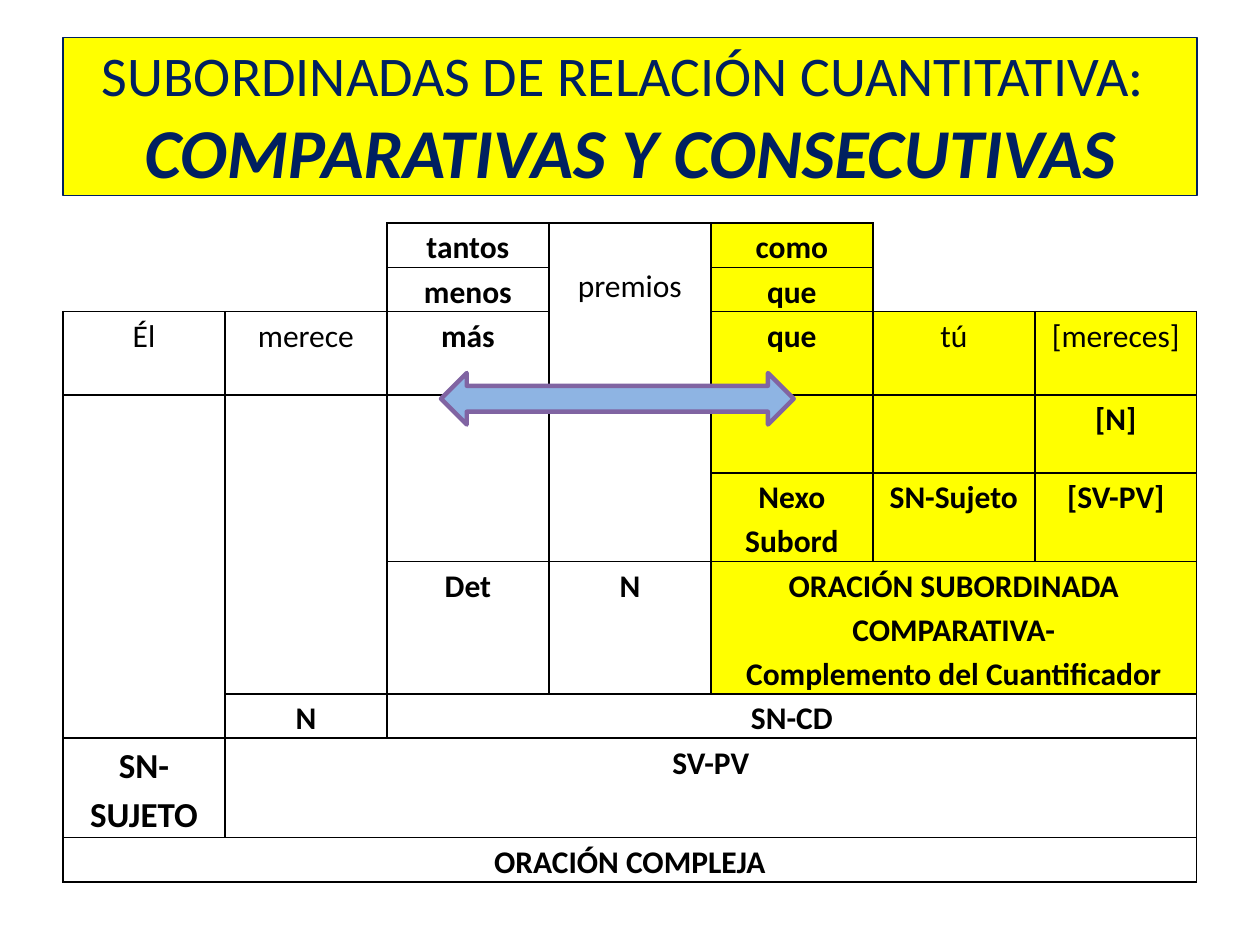
from lxml.etree import SubElement
from pptx import Presentation
from pptx.dml.color import RGBColor
from pptx.enum.shapes import MSO_SHAPE
from pptx.enum.text import MSO_ANCHOR, PP_ALIGN
from pptx.oxml.ns import qn
from pptx.util import Inches, Pt

BLACK = RGBColor(0x00, 0x00, 0x00)
YELLOW = RGBColor(0xFF, 0xFF, 0x00)
NAVY = RGBColor(0x00, 0x20, 0x60)
SKY = RGBColor(0x8E, 0xB4, 0xE3)
PURPLE = RGBColor(0x80, 0x64, 0xA2)
FONT = "Calibri"

MARGIN, TABLE_TOP, TABLE_WIDTH = 0.5, 1.77, 9
COLUMNS = 7
ROW_HEIGHTS = [0.35, 0.35, 0.66, 0.62, 0.7, 1.05, 0.35, 0.79, 0.35]
PREMIOS = (0, 3)
SUBJECT = (7, 0)

WORDS = {
    (2, 0): "Él", (2, 1): "merece", PREMIOS: "premios",
    (2, 5): "tú", (2, 6): "[mereces]",
}
LABELS = {
    (0, 2): "tantos", (1, 2): "menos", (2, 2): "más",
    (0, 4): "como", (1, 4): "que", (2, 4): "que",
    (3, 6): "[N]", (4, 4): "Nexo Subord", (4, 5): "SN-Sujeto", (4, 6): "[SV-PV]",
    (5, 2): "Det", (5, 3): "N",
    (5, 4): "ORACIÓN SUBORDINADA COMPARATIVA-\nComplemento del Cuantificador",
    (6, 1): "N", (6, 2): "SN-CD",
    SUBJECT: "SN-SUJETO", (7, 1): "SV-PV", (8, 0): "ORACIÓN COMPLEJA",
}
SPANS = {
    (0, 5): (1, 2), (1, 5): (1, 2), PREMIOS: (3, 1),
    (3, 0): (4, 1), (3, 1): (3, 1), (3, 2): (2, 1), (3, 3): (2, 1),
    (5, 4): (1, 3), (6, 2): (1, 5), (7, 1): (1, 6), (8, 0): (1, 7),
}


def is_open(row, col):
    """Tell whether a position lies outside the outlined part of the analysis."""
    inside = 0 <= row < len(ROW_HEIGHTS) and 0 <= col < COLUMNS
    return not inside or (row < 2 and col not in (2, 3, 4))


def style_font(font, size, color, bold=False, italic=False):
    """Apply the common typeface with the given look."""
    font.name, font.size = FONT, Pt(size)
    font.bold, font.italic = bold, italic
    font.color.rgb = color


def set_borders(cell, row, col):
    """Outline each side that touches the analysis and clear the others."""
    neighbours = {
        "lnL": (row, col - 1), "lnR": (row, col + 1),
        "lnT": (row - 1, col), "lnB": (row + 1, col),
    }
    properties = cell._tc.get_or_add_tcPr()
    for side, neighbour in neighbours.items():
        border = SubElement(properties, qn(f"a:{side}"), w=str(Pt(1)))
        if is_open(row, col) and is_open(*neighbour):
            SubElement(border, qn("a:noFill"))
        else:
            fill = SubElement(border, qn("a:solidFill"))
            SubElement(fill, qn("a:srgbClr"), val=str(BLACK))


def fill_cell(cell, row, col):
    """Give one cell its borders, background and wording."""
    position = (row, col)
    set_borders(cell, row, col)
    if col >= 4 and row <= 5 and not is_open(row, col):
        cell.fill.solid()
        cell.fill.fore_color.rgb = YELLOW
    else:
        cell.fill.background()
    cell.margin_left = cell.margin_right = Inches(0.07)
    cell.margin_top = Inches(0.31 if position == PREMIOS else 0)
    cell.margin_bottom = 0
    cell.text_frame.text = LABELS.get(position, WORDS.get(position, ""))
    size = 20 if position == SUBJECT else 18
    for paragraph in cell.text_frame.paragraphs:
        paragraph.alignment = PP_ALIGN.CENTER
        paragraph.line_spacing = 1.15
        for run in paragraph.runs:
            style_font(run.font, size, BLACK, bold=position in LABELS)


def add_analysis(slide):
    """Add the syntactic analysis as a table with merged constituents."""
    table = slide.shapes.add_table(
        len(ROW_HEIGHTS), COLUMNS, Inches(MARGIN), Inches(TABLE_TOP),
        Inches(TABLE_WIDTH), Inches(sum(ROW_HEIGHTS)),
    ).table
    table.first_row = table.horz_banding = False
    for column in table.columns:
        column.width = Inches(TABLE_WIDTH / COLUMNS)
    for row, height in enumerate(ROW_HEIGHTS):
        table.rows[row].height = Inches(height)
        for col in range(COLUMNS):
            fill_cell(table.cell(row, col), row, col)
    for (row, col), (rows, cols) in SPANS.items():
        table.cell(row, col).merge(table.cell(row + rows - 1, col + cols - 1))


def add_block(slide, kind, box, fill, line, line_width):
    """Add a filled and outlined preset shape."""
    block = slide.shapes.add_shape(kind, *map(Inches, box))
    block.shadow.inherit = False
    block.fill.solid()
    block.fill.fore_color.rgb = fill
    block.line.color.rgb = line
    block.line.width = Pt(line_width)
    return block


def add_heading(slide):
    """Add the two-line heading on its yellow band."""
    heading = add_block(slide, MSO_SHAPE.RECTANGLE, (MARGIN, 0.3, TABLE_WIDTH, 1.25),
                        YELLOW, NAVY, 0.75)
    frame = heading.text_frame
    frame.word_wrap = True
    frame.vertical_anchor = MSO_ANCHOR.MIDDLE
    paragraph = frame.paragraphs[0]
    paragraph.text = "SUBORDINADAS DE RELACIÓN CUANTITATIVA: \vCOMPARATIVAS Y CONSECUTIVAS"
    paragraph.alignment = PP_ALIGN.CENTER
    topic, kinds = paragraph.runs
    style_font(topic.font, 32, NAVY)
    style_font(kinds.font, 40, NAVY, bold=True, italic=True)


def main():
    """Build and save the slide."""
    deck = Presentation()
    deck.slide_width, deck.slide_height = Inches(10), Inches(7.5)
    slide = deck.slides.add_slide(deck.slide_layouts[6])
    add_analysis(slide)
    add_block(slide, MSO_SHAPE.LEFT_RIGHT_ARROW, (3.5, 2.96, 2.8, 0.41), SKY, PURPLE, 2.5)
    add_heading(slide)
    deck.save("out.pptx")


if __name__ == "__main__":
    main()
